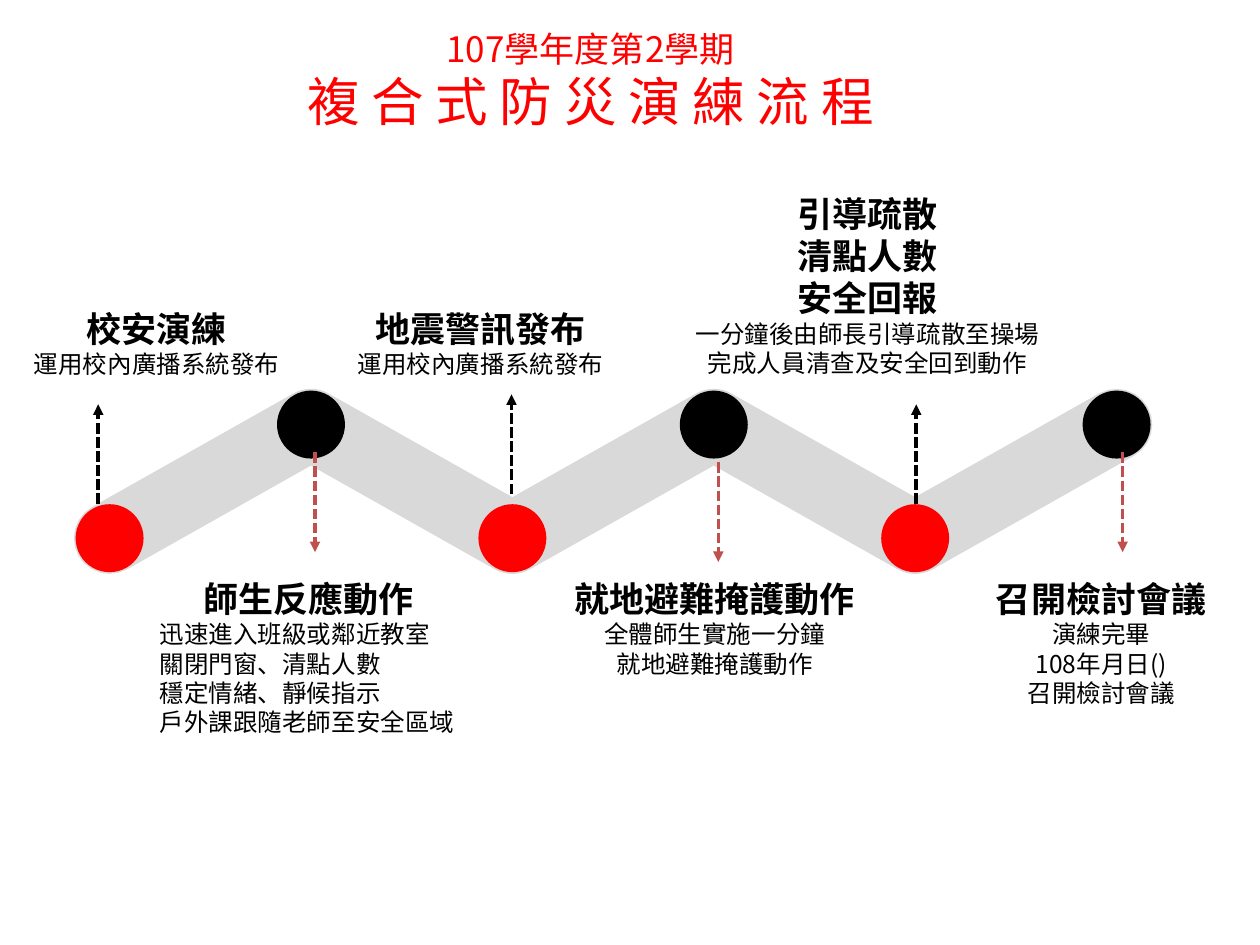
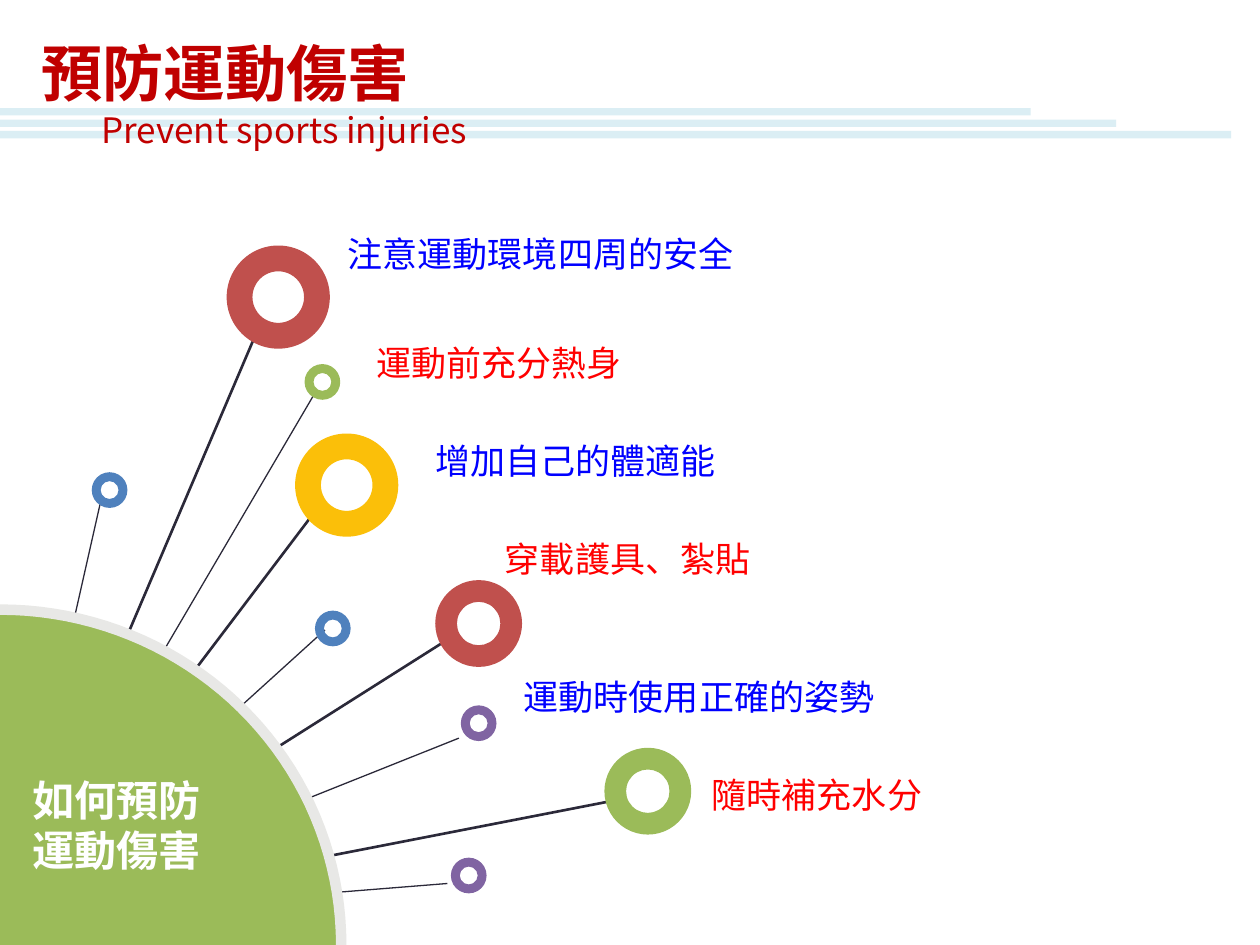
from dataclasses import dataclass
from math import atan2, cos, degrees, pi, radians, sin

from lxml import etree
from pptx import Presentation
from pptx.dml.color import RGBColor
from pptx.enum import dml, shapes, text
from pptx.oxml.ns import qn
from pptx.util import Cm, Pt


@dataclass(frozen=True)
class Theme:
    font: str = "Noto Sans CJK SC"
    red: str = "FF0000"
    blue: str = "0000FF"
    dark: str = "C00000"
    black: str = "000000"
    white: str = "FFFFFF"
    band: str = "D9D9D9"
    stripe: str = "DBEEF4"
    brick: str = "C0504D"
    green: str = "9BBB59"
    gold: str = "FBBF09"
    steel: str = "4F81BD"
    plum: str = "8064A2"
    rim: str = "E8E8E6"
    ink: str = "2B2939"
    head: int = 35
    main: int = 30
    hub: int = 24
    body: int = 20
    note: int = 14


T = Theme()
LEFT, MID = text.PP_ALIGN.LEFT, text.PP_ALIGN.CENTER
BOX = shapes.MSO_SHAPE
LINE = shapes.MSO_CONNECTOR.STRAIGHT


def write(frame, rows, wrap=False):
    """Fill a frame with rows of (text, size, bold, colour, alignment)."""
    frame.word_wrap = wrap
    frame.vertical_anchor = text.MSO_ANCHOR.TOP
    frame.auto_size = text.MSO_AUTO_SIZE.SHAPE_TO_FIT_TEXT
    for i, (words, size, bold, color, align) in enumerate(rows):
        para = frame.add_paragraph() if i else frame.paragraphs[0]
        para.text = words
        para.alignment = align
        for run in para.runs:
            font = run.font
            font.name, font.size, font.bold = T.font, Pt(size), bold
            font.color.rgb = RGBColor.from_string(color)
            east = etree.SubElement(run._r.get_or_add_rPr(), qn("a:ea"))
            east.set("typeface", T.font)


def paint(shape, color):
    """Give a shape a plain fill without an outline."""
    shape.fill.solid()
    shape.fill.fore_color.rgb = RGBColor.from_string(color)
    shape.line.fill.background()


deck = Presentation()
deck.slide_width, deck.slide_height = Cm(25.4), Cm(19.05)
plain = deck.slide_layouts.get_by_name("Title Only")

# Slide 1: drill flow along a zigzag
flow = deck.slides.add_slide(plain)
title = flow.shapes.title
title.left, title.top, title.width, title.height = Cm(5.16), Cm(0.41), Cm(13.49), Cm(2.39)
write(title.text_frame,
      [("107學年度第2學期\v複 合 式 防 災 演 練 流 程", T.main, False, T.red, MID)], True)
title.text_frame.paragraphs[0].runs[0].font.size = Pt(T.body)
title.text_frame.auto_size = text.MSO_AUTO_SIZE.NONE
title.text_frame.vertical_anchor = text.MSO_ANCHOR.MIDDLE

# heads, notes, note alignment, text centre, width, height, arrow x, arrow y
steps = [
    (["校安演練"], ["運用校內廣播系統發布"], MID, 3.16, 5.51, 1.7, 1.98, 10.16),
    (["師生反應動作"],
     ["迅速進入班級或鄰近教室\v關閉門窗、清點人數", "穩定情緒、靜候指示", "戶外課跟隨老師至安全區域"],
     LEFT, 6.22, 6.5, 3.51, 6.35, 9.12),
    (["地震警訊發布"], ["運用校內廣播系統發布"], MID, 9.69, 5.51, 1.7, 10.31, 9.96),
    (["就地避難掩護動作"], ["全體師生實施一分鐘", "就地避難掩護動作"],
     MID, 14.41, 6.22, 2.31, 14.48, 9.32),
    (["引導疏散", "清點人數", "安全回報"],
     ["一分鐘後由師長引導疏散至操場\v完成人員清查及安全回到動作"],
     MID, 17.49, 7.49, 4.01, 18.47, 10.16),
    (["召開檢討會議"], ["演練完畢", "108年月日()", "召開檢討會議"],
     MID, 22.2, 4.78, 2.9, 22.63, 9.12),
]
low, high, gap, half, dot, reach = 10.85, 8.56, 4.06, 0.72, 1.37, 2.01
nodes = [(2.21 + gap * i, high if i % 2 else low) for i in range(len(steps))]
tilt = degrees(atan2(low - high, gap))
inner = half / cos(radians(tilt))

# Clockwise outline: round caps and outer bends, sharp inner bends
turns = [(nodes[0], 270 + tilt, 90 + tilt, half)]
for i in range(1, 5):
    turns.append((nodes[i], 90 + tilt, 90 - tilt, half) if i % 2 else (nodes[i], 90, 90, inner))
turns.append((nodes[5], 90 + tilt, tilt - 90, half))
for i in range(4, 0, -1):
    turns.append((nodes[i], -90, -90, inner) if i % 2 else (nodes[i], tilt - 90, -90 - tilt, half))
edge = []
for (x, y), a, b, r in turns:
    count = 12 if a != b else 0
    for k in range(count + 1):
        turn = radians(a + (b - a) * k / max(count, 1))
        edge.append((Cm(x + r * cos(turn)), Cm(y - r * sin(turn))))
pen = flow.shapes.build_freeform(*edge[0])
pen.add_line_segments(edge[1:])
paint(pen.convert_to_shape(), T.band)

for i, (heads, notes, align, mid, wide, tall, ax, ay) in enumerate(steps):
    down = i % 2 == 1
    x, y = nodes[i]
    ball = flow.shapes.add_shape(BOX.OVAL, Cm(x - dot / 2), Cm(y - dot / 2), Cm(dot), Cm(dot))
    paint(ball, T.black if down else T.red)

    arrow = flow.shapes.add_connector(
        LINE, Cm(ax), Cm(ay), Cm(ax), Cm(ay + (reach if down else -reach)))
    arrow.line.color.rgb = RGBColor.from_string(T.brick if down else T.black)
    arrow.line.width = Pt(2)
    arrow.line.dash_style = dml.MSO_LINE.SQUARE_DOT
    etree.SubElement(arrow.line._ln, qn("a:tailEnd")).set("type", "triangle")

    top = 11.51 if down else 7.77 - tall
    label = flow.shapes.add_textbox(Cm(mid - wide / 2), Cm(top), Cm(wide), Cm(tall))
    write(label.text_frame, [(h, T.body, True, T.black, MID) for h in heads]
          + [(n, T.note, False, T.black, align) for n in notes])

# Slide 2: spokes around a quarter disc
care = deck.slides.add_slide(plain)
for i, wide in enumerate([20.78, 22.5, 24.82]):
    bar = care.shapes.add_shape(BOX.RECTANGLE, 0, Cm(2.18 + 0.23 * i), Cm(wide), Cm(0.15))
    paint(bar, T.stripe)

title = care.shapes.title
title.left, title.top, title.width, title.height = Cm(0.58), Cm(0.58), Cm(10.31), Cm(2.62)
write(title.text_frame, [("預防運動傷害", T.head, True, T.dark, LEFT),
                         ("Prevent sports injuries", T.body, False, T.dark, MID)], True)
care.shapes.element.append(title.element)  # in front of the stripes

# ring centre, diameter, colour, spoke tip
rings = [
    (5.61, 5.99, 2.08, T.brick, 5.16, 6.73),
    (6.5, 7.7, 0.72, T.green, 6.35, 7.92),
    (6.99, 9.78, 2.08, T.gold, 6.35, 10.31),
    (2.21, 9.88, 0.72, T.steel, 2.03, 10.11),
    (6.71, 12.67, 0.72, T.steel, 6.55, 12.7),
    (9.65, 12.57, 1.75, T.brick, 9.09, 12.85),
    (9.65, 14.58, 0.72, T.plum, 9.25, 14.88),
    (13.06, 15.95, 1.75, T.green, 12.32, 16.15),
    (9.45, 17.65, 0.72, T.plum, 9.02, 17.81),
]
for x, y, size, color, tx, ty in rings:
    spoke = care.shapes.add_connector(LINE, Cm(tx), Cm(ty), Cm(0.13), Cm(18.52))
    spoke.line.color.rgb = RGBColor.from_string(T.ink)
    spoke.line.width = Pt(1.5 if size > 1 else 0.75)

arc = [(Cm(6.88 * sin(k * pi / 80)), Cm(19.05 - 6.76 * cos(k * pi / 80))) for k in range(41)]
for solid in (True, False):
    pen = care.shapes.build_freeform(*arc[0])
    pen.add_line_segments(arc[1:] + [(0, Cm(19.05))] * solid, close=solid)
    disc = pen.convert_to_shape()
    paint(disc, T.green)
    if not solid:
        disc.fill.background()
        disc.line.color.rgb = RGBColor.from_string(T.rim)
        disc.line.width = Pt(6)
label = care.shapes.add_textbox(Cm(0.41), Cm(15.49), Cm(4.11), Cm(2.31))
write(label.text_frame, [("如何預防運動傷害", T.hub, True, T.white, LEFT)], True)

for x, y, size, color, tx, ty in rings:
    ring = care.shapes.add_shape(
        BOX.DONUT, Cm(x - size / 2), Cm(y - size / 2), Cm(size), Cm(size))
    ring.adjustments[0] = 0.25
    paint(ring, color)

tips = [
    ("注意運動環境四周的安全", 6.76, 4.57),
    ("運動前充分熱身", 7.34, 6.76),
    ("增加自己的體適能", 8.53, 8.74),
    ("穿載護具、紮貼", 9.93, 10.72),
    ("運動時使用正確的姿勢", 10.31, 13.49),
    ("隨時補充水分", 14.1, 15.47),
]
for i, (words, x, y) in enumerate(tips):
    label = care.shapes.add_textbox(Cm(x), Cm(y), Cm(0.51 + 0.71 * len(words)), Cm(1.12))
    write(label.text_frame, [(words, T.body, False, T.red if i % 2 else T.blue, LEFT)])

# No shadows anywhere
for slide in deck.slides:
    for shape in slide.shapes:
        if shape.shape_type == shapes.MSO_SHAPE_TYPE.LINE:
            etree.SubElement(shape.element.spPr, qn("a:effectLst"))
        elif not shape.is_placeholder:
            shape.shadow.inherit = False

deck.save("out.pptx")
